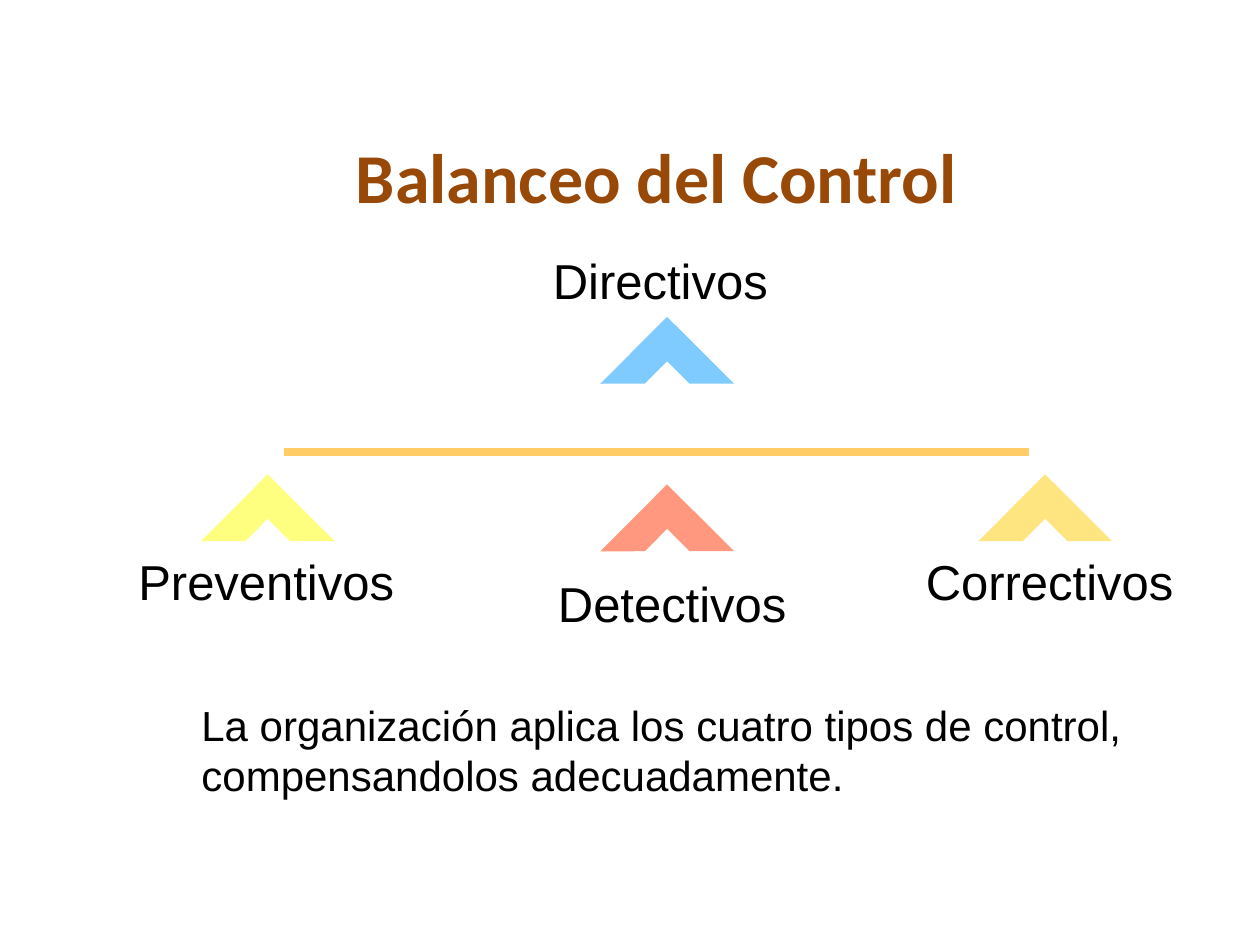
from dataclasses import dataclass

from lxml.etree import SubElement
from pptx import Presentation
from pptx.dml.color import RGBColor as RGB
from pptx.enum.shapes import MSO_CONNECTOR as Link, MSO_SHAPE as Shape
from pptx.enum.text import MSO_ANCHOR as Anchor, PP_ALIGN as Align
from pptx.oxml.ns import qn
from pptx.slide import Slide
from pptx.util import Inches, Pt


@dataclass(frozen=True)
class Theme:
    title: str = "984807"
    ink: str = "000000"
    beam: str = "FFCC66"
    head: str = "Calibri"
    body: str = "Arial"
    big: int = 40
    mid: int = 28
    small: int = 24


@dataclass(frozen=True)
class Control:
    name: str
    label: tuple[float, float, float, float]
    mark: tuple[float, float]
    color: str


THEME = Theme()
SIDE = 0.75
CONTROLS = [
    Control("Directivos", (4.29, 1.94, 2, 0.52), (4.92, 2.67), "0099FF"),
    Control("Preventivos", (1, 4.33, 2.5, 0.5), (1.75, 3.92), "FFFF00"),
    Control("Detectivos", (4.33, 4.5, 2.5, 0.5), (4.92, 4), "FF3300"),
    Control("Correctivos", (7.25, 4.33, 2.5, 0.5), (7.92, 3.92), "FFCC00"),
]


def write(slide: Slide, text: str, at: tuple[float, float, float, float], *,
          size: int, font: str = THEME.body, color: str = THEME.ink,
          bold: bool = False, align: Align = Align.LEFT,
          anchor: Anchor = Anchor.TOP) -> None:
    frame = slide.shapes.add_textbox(*map(Inches, at)).text_frame
    frame.word_wrap = True
    frame.vertical_anchor = anchor
    para = frame.paragraphs[0]
    para.alignment = align
    run = para.add_run()
    run.text = text
    run.font.size = Pt(size)
    run.font.name = font
    run.font.bold = bold
    run.font.color.rgb = RGB.from_string(color)


def draw_mark(slide: Slide, item: Control) -> None:
    """Half frame turned to point upward, with a half-transparent fill."""
    mark = slide.shapes.add_shape(
        Shape.HALF_FRAME, *map(Inches, (*item.mark, SIDE, SIDE)))
    mark.rotation = 44.9
    mark.shadow.inherit = False
    mark.line.fill.background()
    mark.fill.solid()
    mark.fill.fore_color.rgb = RGB.from_string(item.color)
    tint = mark.fill._xPr.find(qn("a:solidFill"))[0]
    SubElement(tint, qn("a:alpha")).set("val", "50000")


def draw_beam(slide: Slide, left: float, right: float, y: float) -> None:
    beam = slide.shapes.add_connector(
        Link.STRAIGHT, *map(Inches, (left, y, right, y)))
    beam.line.color.rgb = RGB.from_string(THEME.beam)
    beam.line.width = Pt(4.5)
    SubElement(beam._element.spPr, qn("a:effectLst"))


def main() -> None:
    deck = Presentation()
    deck.slide_width, deck.slide_height = Inches(10), Inches(7.5)
    slide = deck.slides.add_slide(deck.slide_layouts[6])

    # Title
    write(slide, "Balanceo del Control", (0.96, 1.11, 8.5, 0.56),
          size=THEME.big, font=THEME.head, color=THEME.title, bold=True,
          align=Align.CENTER, anchor=Anchor.MIDDLE)

    # Balance: beam, marks and their labels
    draw_beam(slide, 2.25, 8.17, 3.59)
    for item in CONTROLS:
        write(slide, item.name, item.label, size=THEME.mid)
        draw_mark(slide, item)

    # Closing statement
    write(slide, "La organización aplica los cuatro tipos de control, "
          "compensandolos adecuadamente.", (1.5, 5.5, 8.08, 0.5),
          size=THEME.small)

    deck.save("out.pptx")


if __name__ == "__main__":
    main()
